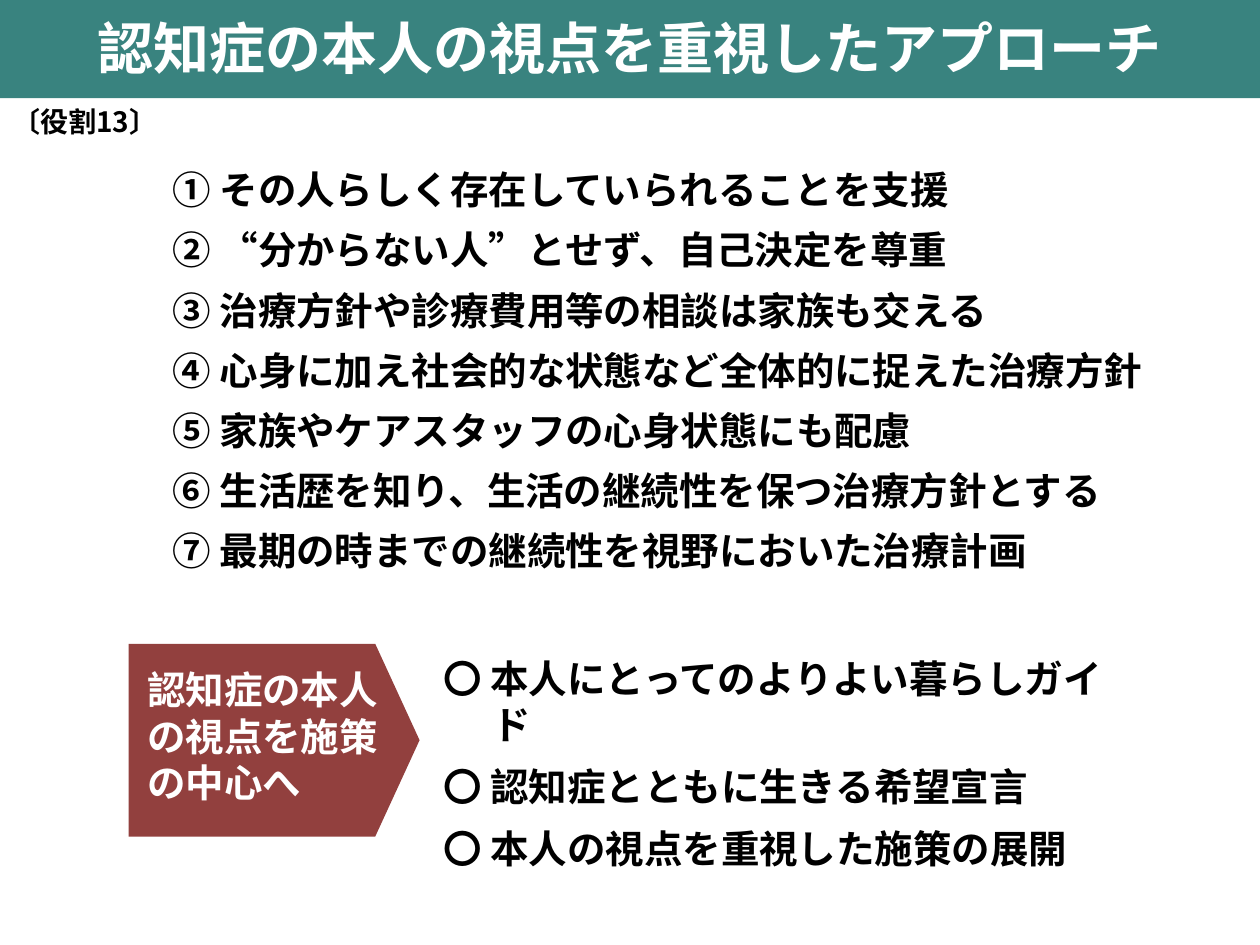
from dataclasses import dataclass

from lxml import etree
from pptx import Presentation
from pptx.dml.color import RGBColor
from pptx.enum.shapes import MSO_SHAPE
from pptx.enum.text import MSO_ANCHOR, MSO_AUTO_SIZE, PP_ALIGN
from pptx.oxml.ns import qn
from pptx.util import Pt

RECTANGLE = MSO_SHAPE.RECTANGLE
PENTAGON = MSO_SHAPE.PENTAGON
LEFT, CENTER = PP_ALIGN.LEFT, PP_ALIGN.CENTER
TOP, MIDDLE = MSO_ANCHOR.TOP, MSO_ANCHOR.MIDDLE
NO_FIT, GROW = MSO_AUTO_SIZE.NONE, MSO_AUTO_SIZE.SHAPE_TO_FIT_TEXT

TITLE_ONLY = 5
FONT = "Noto Sans CJK JP"
TEAL, RED, WHITE, BLACK = "39837F", "92403E", "FFFFFF", "000000"
HANGING = 28.08

PRINCIPLES = [
    "① その人らしく存在していられることを支援",
    "② “分からない人”とせず、自己決定を尊重",
    "③ 治療方針や診療費用等の相談は家族も交える",
    "④ 心身に加え社会的な状態など全体的に捉えた治療方針",
    "⑤ 家族やケアスタッフの心身状態にも配慮",
    "⑥ 生活歴を知り、生活の継続性を保つ治療方針とする",
    "⑦ 最期の時までの継続性を視野においた治療計画",
]
MEASURES = [
    "〇 本人にとってのよりよい暮らしガイド",
    "〇 認知症とともに生きる希望宣言",
    "〇 本人の視点を重視した施策の展開",
]


@dataclass(frozen=True)
class Area:
    left: float
    top: float
    width: float
    height: float

    def lengths(self):
        return Pt(self.left), Pt(self.top), Pt(self.width), Pt(self.height)


@dataclass(frozen=True)
class TextStyle:
    size: float = 22
    color: str = BLACK
    align: PP_ALIGN = LEFT
    anchor: MSO_ANCHOR = TOP
    fit: MSO_AUTO_SIZE = NO_FIT
    hanging: float = 0
    space_before: float = 0


@dataclass(frozen=True)
class TextBlock:
    area: Area
    lines: list[str]
    style: TextStyle


TITLE = TextBlock(Area(17.28, 1.44, 685.44, 50.4), ["認知症の本人の視点を重視したアプローチ"],
                  TextStyle(32, WHITE, CENTER, MIDDLE))
PRINCIPLE_LIST = TextBlock(Area(91.44, 91.44, 606.24, 241.2), PRINCIPLES,
                           TextStyle(hanging=HANGING, space_before=8))
MEASURE_LIST = TextBlock(Area(246.24, 370.8, 411.12, 110.16), MEASURES,
                         TextStyle(hanging=HANGING, space_before=9))
ARROW_TEXT = TextBlock(Area(77.04, 377.28, 159.84, 94.32),
                       ["認知症の本人", "の視点を施策の中心へ"], TextStyle(color=WHITE))
ROLE_LABEL = TextBlock(Area(0, 56.16, 97.2, 26.64), ["〔役割13〕"],
                       TextStyle(16, align=CENTER, fit=GROW))


def rgb(color: str) -> RGBColor:
    return RGBColor.from_string(color)


def format_span(span, style: TextStyle) -> None:
    font = span.font
    font.name = FONT
    font.size = Pt(style.size)
    font.bold = True
    font.color.rgb = rgb(style.color)
    properties = span._r.get_or_add_rPr()
    etree.SubElement(properties, qn("a:ea")).set("typeface", FONT)


def write_text(box, block: TextBlock) -> None:
    """Place the box and fill it with one paragraph per line."""
    style = block.style
    box.left, box.top, box.width, box.height = block.area.lengths()
    frame = box.text_frame
    frame.text = "\n".join(block.lines)
    frame.word_wrap = True
    frame.auto_size = style.fit
    frame.vertical_anchor = style.anchor
    for para in frame.paragraphs:
        para.alignment = style.align
        para.space_before = Pt(style.space_before)
        if style.hanging:
            properties = para._p.get_or_add_pPr()
            properties.set("marL", str(Pt(style.hanging)))
            properties.set("indent", str(-Pt(style.hanging)))
        for span in para.runs:
            format_span(span, style)


def add_text(page, block: TextBlock) -> None:
    write_text(page.shapes.add_textbox(*block.area.lengths()), block)


def add_panel(page, kind: MSO_SHAPE, area: Area, color: str):
    panel = page.shapes.add_shape(kind, *area.lengths())
    panel.shadow.inherit = False
    panel.fill.solid()
    panel.fill.fore_color.rgb = rgb(color)
    panel.line.fill.background()
    return panel


def main() -> None:
    deck = Presentation()
    deck.slide_width, deck.slide_height = Pt(720), Pt(540)
    page = deck.slides.add_slide(deck.slide_layouts[TITLE_ONLY])

    band = add_panel(page, RECTANGLE, Area(0, 0, 720, 56.16), TEAL)
    title = page.shapes.title
    title.element.addprevious(band.element)  # the band lies behind the title
    write_text(title, TITLE)

    add_text(page, PRINCIPLE_LIST)
    add_text(page, MEASURE_LIST)
    arrow = add_panel(page, PENTAGON, Area(73.44, 367.92, 166.32, 110.16), RED)
    arrow.adjustments[0] = 0.23
    add_text(page, ARROW_TEXT)
    add_text(page, ROLE_LABEL)

    deck.save("out.pptx")


if __name__ == "__main__":
    main()
